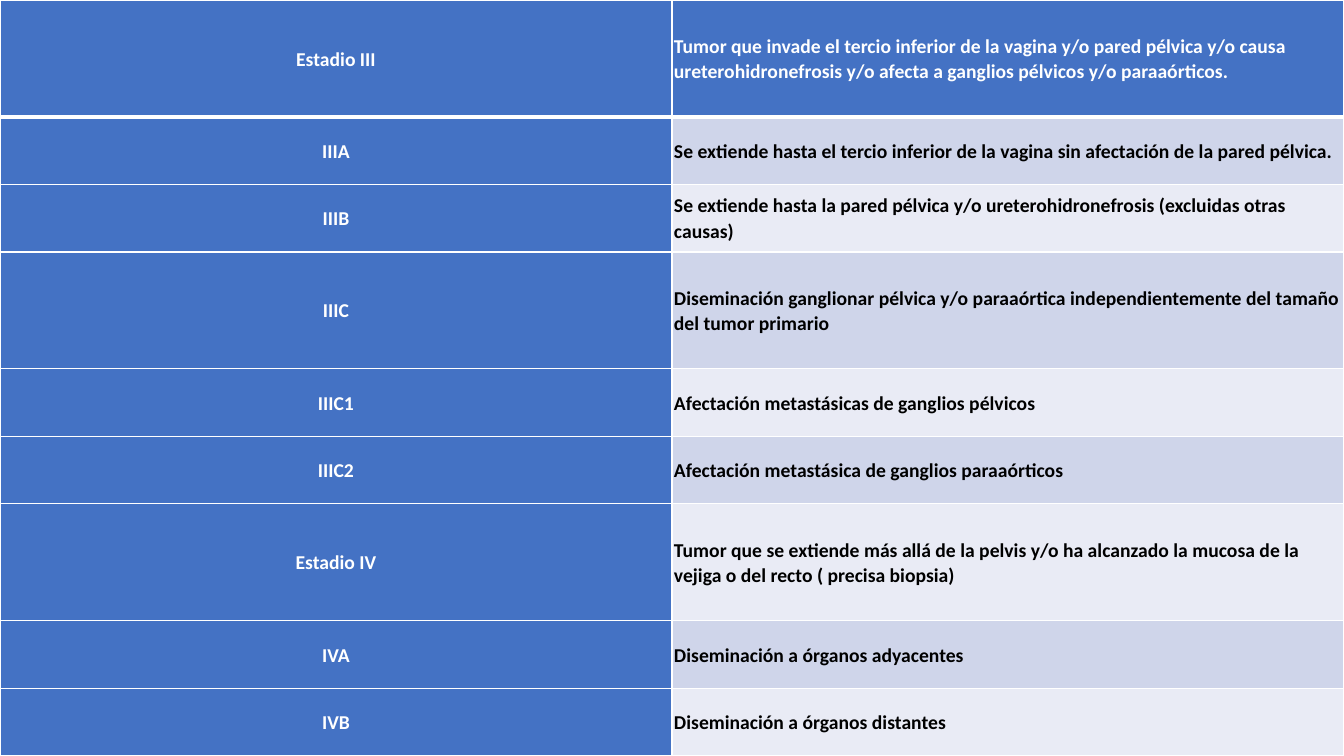
from dataclasses import dataclass

from lxml import etree
from pptx import Presentation
from pptx.dml.color import RGBColor as RGB
from pptx.enum.text import MSO_ANCHOR as ANCHOR, PP_ALIGN as ALIGN
from pptx.oxml.ns import qn
from pptx.util import Inches, Pt


@dataclass(frozen=True)
class Theme:
    """Colours, font and sizes of the slide."""
    font: str = "Calibri"
    size: float = 14
    accent: str = "4472C4"
    bands: tuple = ("E9EBF5", "CFD5EA")
    light: str = "FFFFFF"
    dark: str = "000000"
    thin: float = 1
    thick: float = 3


THEME = Theme()
WIDTH, HEIGHT = 13.33, 7.5
TALL, SHORT = 1.16, 0.67
INSET = 0.02

STAGES = [
    ("Estadio III", "Tumor que invade el tercio inferior de la vagina y/o pared pélvica y/o causa "
     "ureterohidronefrosis y/o afecta a ganglios pélvicos y/o paraaórticos.", TALL),
    ("IIIA", "Se extiende hasta el tercio inferior de la vagina sin afectación de la pared pélvica.", SHORT),
    ("IIIB", "Se extiende hasta la pared pélvica y/o ureterohidronefrosis (excluidas otras causas)", SHORT),
    ("IIIC", "Diseminación ganglionar pélvica y/o paraaórtica independientemente del tamaño "
     "del tumor primario", TALL),
    ("IIIC1", "Afectación metastásicas de ganglios pélvicos", SHORT),
    ("IIIC2", "Afectación metastásica de ganglios paraaórticos", SHORT),
    ("Estadio IV", "Tumor que se extiende más allá de la pelvis y/o ha alcanzado la mucosa de la "
     "vejiga o del recto ( precisa biopsia)", TALL),
    ("IVA", "Diseminación a órganos adyacentes", SHORT),
    ("IVB", "Diseminación a órganos distantes", SHORT),
]


def write(tf, text, color=THEME.dark, align=ALIGN.LEFT, size=THEME.size, bold=True):
    """Write one formatted paragraph into a text frame."""
    p = tf.paragraphs[0]
    p.alignment = align
    p.line_spacing = 1.07
    p.space_after = Pt(22.5)
    r = p.add_run()
    r.text = text
    r.font.name = THEME.font
    r.font.size = Pt(size)
    r.font.bold = bold
    r.font.color.rgb = RGB.from_string(color)


def set_borders(cell, top, bottom):
    """Draw the four light borders of a cell with the given widths above and below."""
    tc_pr = cell._tc.get_or_add_tcPr()
    for side, width in (("L", THEME.thin), ("R", THEME.thin), ("T", top), ("B", bottom)):
        ln = etree.SubElement(tc_pr, qn(f"a:ln{side}"), w=str(Pt(width)))
        fill = etree.SubElement(ln, qn("a:solidFill"))
        etree.SubElement(fill, qn("a:srgbClr"), val=THEME.light)


def format_cell(cell, fill, top, bottom):
    """Set the borders, fill, insets and anchor of a cell."""
    set_borders(cell, top, bottom)
    cell.fill.solid()
    cell.fill.fore_color.rgb = RGB.from_string(fill)
    cell.margin_left = cell.margin_right = Inches(INSET)
    cell.margin_top = cell.margin_bottom = Inches(INSET)
    cell.vertical_anchor = ANCHOR.MIDDLE


def add_stage_table(slide, left, top, width, height):
    """Place the table of tumour stages in the given box."""
    table = slide.shapes.add_table(len(STAGES), 2, Inches(left), Inches(top),
                                   Inches(width), Inches(height)).table
    table.first_col = True
    for col in table.columns:
        col.width = Inches(width / 2)
    scale = height / sum(row_height for _, _, row_height in STAGES)
    for i, (stage, description, row_height) in enumerate(STAGES):
        table.rows[i].height = Inches(row_height * scale)
        above = THEME.thick if i == 1 else THEME.thin
        below = THEME.thick if i == 0 else THEME.thin
        label, detail = table.cell(i, 0), table.cell(i, 1)
        format_cell(label, THEME.accent, above, below)
        format_cell(detail, THEME.bands[i % 2] if i else THEME.accent, above, below)
        write(label.text_frame, stage, color=THEME.light, align=ALIGN.CENTER)
        write(detail.text_frame, description, color=THEME.dark if i else THEME.light)


def main():
    """Build and save the presentation."""
    prs = Presentation()
    prs.slide_width, prs.slide_height = Inches(WIDTH), Inches(HEIGHT)
    slide = prs.slides.add_slide(prs.slide_layouts[6])
    add_stage_table(slide, 0, 0, WIDTH, HEIGHT)
    prs.save("out.pptx")


if __name__ == "__main__":
    main()
